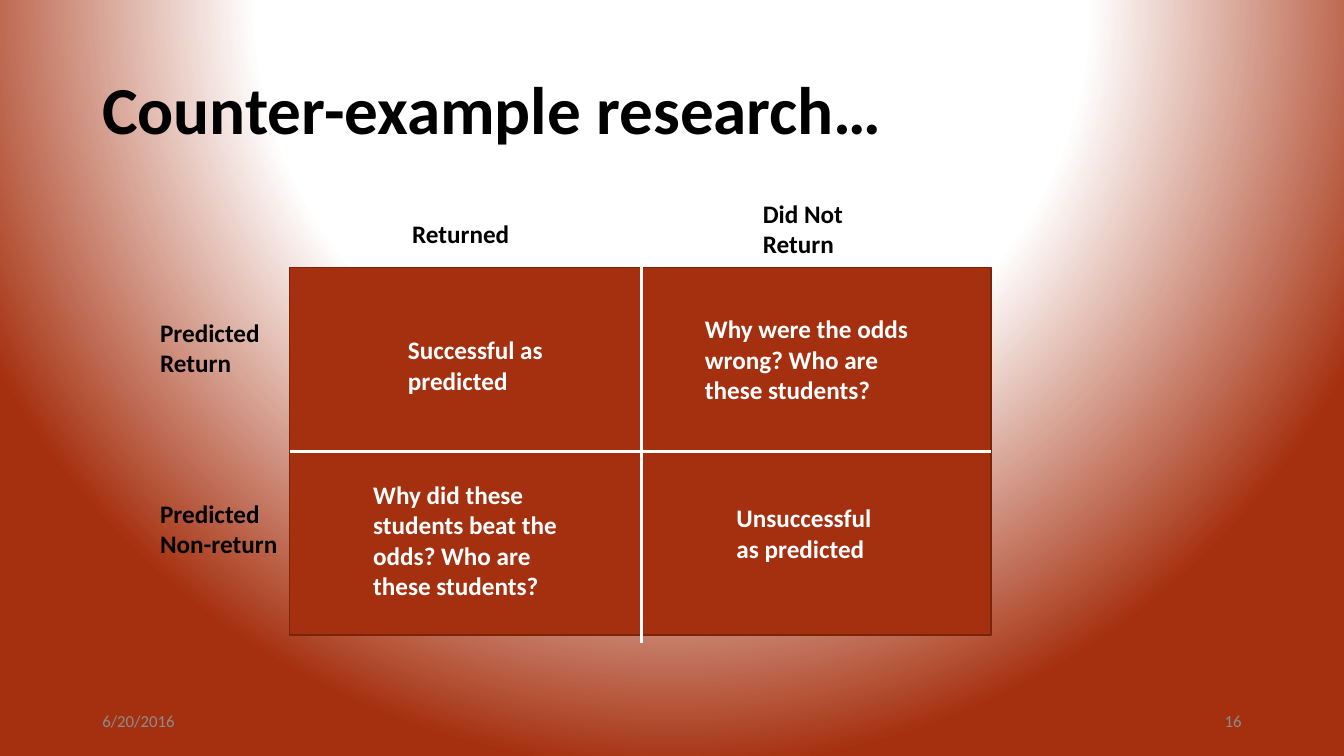
from pptx import Presentation, oxml, util as u
from pptx.dml import color
from pptx.enum import shapes, text
from pptx.oxml import ns

PX = 9525
COLORS = {"brick": "A5300F", "edge": "7A240B", "white": "FFFFFF", "black": "000000", "gray": "8C8C8C"}
HEADINGS = [
    ("Predicted Return", -133, 42, 120, 68),
    ("Predicted Non-return", -133, 215, 132, 68),
    ("Returned", 107, -52, 120, 38),
    ("Did Not Return", 441, -71, 120, 68),
]
OUTCOMES = [
    ("Successful as predicted", 103, 59, 150, 68),
    ("Unsuccessful as predicted", 416, 219, 170, 68),
    ("Why were the odds wrong? Who are these students?", 386, 39, 213, 97),
    ("Why did these students beat the odds? Who are these students?", 70, 197, 213, 126),
]


def px(*lengths):
    return [u.Emu(length * PX) for length in lengths]


def rgb(name):
    return color.RGBColor.from_string(COLORS[name])


def add_text(slide, words, box, size, color_name, bold=False,
             anchor=text.MSO_ANCHOR.TOP, align=text.PP_ALIGN.LEFT):
    frame = slide.shapes.add_textbox(*px(*box)).text_frame
    frame.word_wrap = True
    frame.vertical_anchor = anchor
    paragraph = frame.paragraphs[0]
    paragraph.text = words
    paragraph.alignment = align
    paragraph.font.name = "Calibri"
    paragraph.font.size = u.Pt(size)
    paragraph.font.bold = bold
    paragraph.font.color.rgb = rgb(color_name)
    return paragraph


def add_divider(slide, x1, y1, x2, y2):
    divider = slide.shapes.add_connector(shapes.MSO_CONNECTOR.STRAIGHT, *px(x1, y1, x2, y2))
    divider.line.color.rgb = rgb("white")
    divider.line.width = u.Pt(2.25)
    divider.element.spPr.append(oxml.parse_xml(f"<a:effectLst {ns.nsdecls('a')}/>"))
    return divider


def add_background(slide):
    stops = "".join(
        f'<a:gs pos="{position * 1000}"><a:srgbClr val="{COLORS[name]}"/></a:gs>'
        for position, name in [(0, "white"), (54, "white"), (100, "brick")])
    slide.element.cSld.insert(0, oxml.parse_xml(
        f'<p:bg {ns.nsdecls("p", "a")}><p:bgPr><a:gradFill rotWithShape="1">'
        f'<a:gsLst>{stops}</a:gsLst><a:path path="circle">'
        '<a:fillToRect l="50000" t="-80000" r="50000" b="180000"/></a:path>'
        '</a:gradFill><a:effectLst/></p:bgPr></p:bg>'))


def add_title(slide, box):
    paragraph = add_text(slide, "Counter-example research…", box, 48, "black", True,
                         text.MSO_ANCHOR.MIDDLE)
    paragraph.line_spacing = 0.9


def add_footer(slide, left, top, width, height):
    field = 288
    add_text(slide, "6/20/2016", (left, top, field, height), 12, "gray",
             anchor=text.MSO_ANCHOR.MIDDLE)
    add_text(slide, "16", (left + width - field, top, field, height), 12, "gray",
             anchor=text.MSO_ANCHOR.MIDDLE, align=text.PP_ALIGN.RIGHT)


def add_matrix(slide, left, top, width, height):
    panel = slide.shapes.add_shape(shapes.MSO_SHAPE.RECTANGLE, *px(left, top, width, height))
    panel.shadow.inherit = False
    panel.fill.solid()
    panel.fill.fore_color.rgb = rgb("brick")
    panel.line.color.rgb = rgb("edge")
    panel.line.width = u.Pt(1)

    middle_x = left + width // 2 + 1
    middle_y = top + height // 2
    add_divider(slide, middle_x, top - 1, middle_x, top + height + 7)
    row_divider = add_divider(slide, left, middle_y, left + width, middle_y)
    row_divider.begin_connect(panel, 1)
    row_divider.end_connect(panel, 3)

    for labels, color_name in [(HEADINGS, "black"), (OUTCOMES, "white")]:
        for words, x, y, label_width, label_height in labels:
            add_text(slide, words, (left + x, top + y, label_width, label_height),
                     18, color_name, True)


def main():
    presentation = Presentation()
    presentation.slide_width, presentation.slide_height = px(1280, 720)
    slide = presentation.slides.add_slide(presentation.slide_layouts[6])
    add_background(slide)
    add_title(slide, (88, 38, 1104, 139))
    add_footer(slide, 88, 667, 1104, 38)
    add_matrix(slide, 276, 255, 668, 350)
    presentation.save("out.pptx")


if __name__ == "__main__":
    main()
